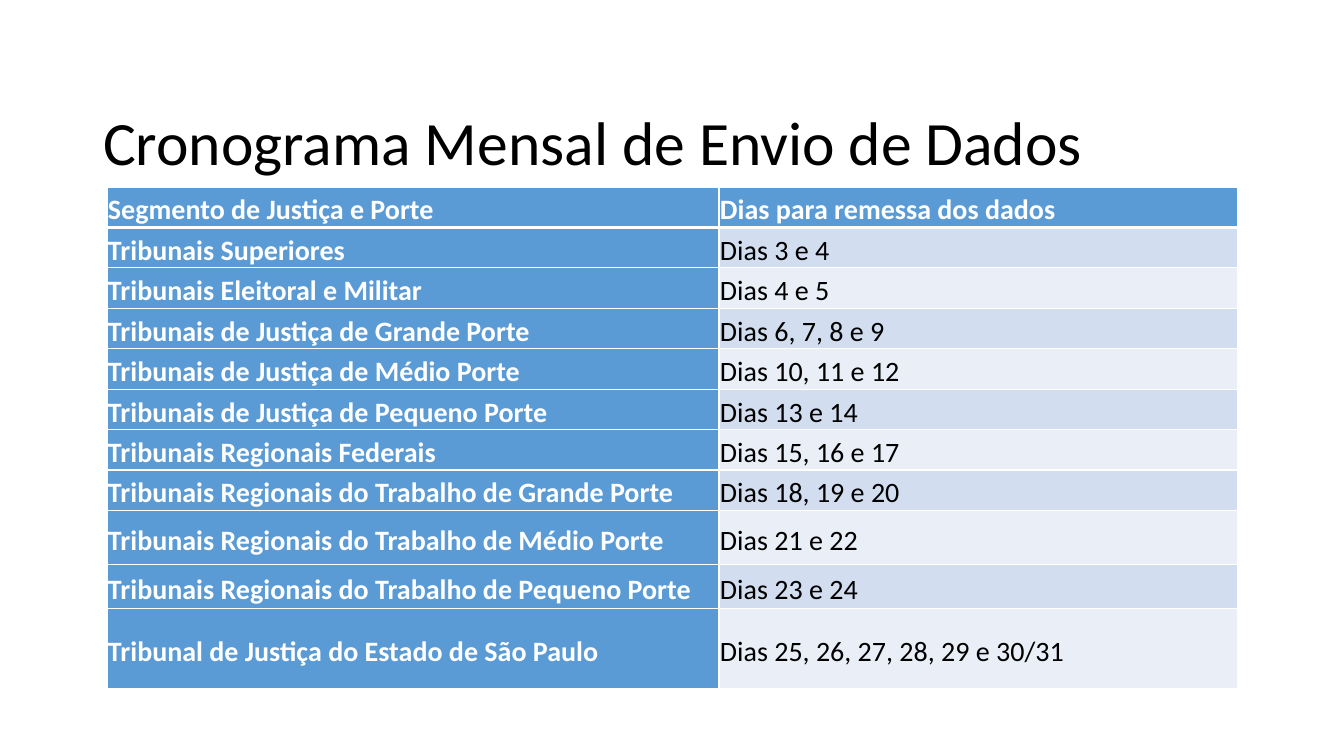
"""Build the slide with the monthly data submission schedule."""
from lxml.etree import SubElement
from pptx import Presentation
from pptx.dml.color import RGBColor
from pptx.enum.text import MSO_ANCHOR, MSO_AUTO_SIZE, PP_ALIGN
from pptx.oxml.ns import qn
from pptx.util import Pt

TITLE = "Cronograma Mensal de Envio de Dados"
SCHEDULE = [
    ("Segmento de Justiça e Porte", "Dias para remessa dos dados"),
    ("Tribunais Superiores", "Dias 3 e 4"),
    ("Tribunais Eleitoral e Militar", "Dias 4 e 5"),
    ("Tribunais de Justiça de Grande Porte", "Dias 6, 7, 8 e 9"),
    ("Tribunais de Justiça de Médio Porte", "Dias 10, 11 e 12"),
    ("Tribunais de Justiça de Pequeno Porte", "Dias 13 e 14"),
    ("Tribunais Regionais Federais", "Dias 15, 16 e 17"),
    ("Tribunais Regionais do Trabalho de Grande Porte", "Dias 18, 19 e 20"),
    ("Tribunais Regionais do Trabalho de Médio Porte", "Dias 21 e 22"),
    ("Tribunais Regionais do Trabalho de Pequeno Porte", "Dias 23 e 24"),
    ("Tribunal de Justiça do Estado de São Paulo", "Dias 25, 26, 27, 28, 29 e 30/31"),
]
COLUMN_WIDTHS = [612, 519]
ROW_HEIGHTS = [40] * 8 + [54, 44, 80]
FONT = "Calibri"
BLACK, WHITE, BLUE = "000000", "FFFFFF", "5B9BD5"
BANDS = ["EAEFF7", "D2DEEF"]


def px(length):
    return round(length * 914400 / 100.8)


def color(code):
    return RGBColor.from_string(code)


def style_text(para, size, code, bold, spacing):
    para.alignment = PP_ALIGN.LEFT
    para.line_spacing = spacing
    for span in para.runs:
        span.font.name = FONT
        span.font.size = Pt(size)
        span.font.bold = bold
        span.font.color.rgb = color(code)


def add_borders(cell, header):
    properties = cell._tc.get_or_add_tcPr()
    for side in ("lnL", "lnR", "lnT", "lnB"):
        width = 3 if header and side == "lnB" else 1
        line = SubElement(properties, qn(f"a:{side}"), w=str(Pt(width)))
        fill = SubElement(line, qn("a:solidFill"))
        SubElement(fill, qn("a:srgbClr"), val=WHITE)


def fill_cell(cell, text, row, column):
    header = row == 0
    strong = header or column == 0
    add_borders(cell, header)
    cell.fill.solid()
    cell.fill.fore_color.rgb = color(BLUE if strong else BANDS[row % 2])
    cell.margin_left = cell.margin_right = cell.margin_top = px(1)
    cell.margin_bottom = 0
    cell.vertical_anchor = MSO_ANCHOR.MIDDLE
    cell.text_frame.text = text
    para = cell.text_frame.paragraphs[0]
    style_text(para, 20, WHITE if strong else BLACK, strong, 1.15)
    para.space_after = Pt(10)


def add_title(page):
    title = page.shapes.title
    title.left, title.top, title.width, title.height = map(px, (93, 104, 1159, 83))
    frame = title.text_frame
    frame.text = TITLE
    frame.word_wrap = True
    frame.auto_size = MSO_AUTO_SIZE.NONE
    frame.vertical_anchor = MSO_ANCHOR.MIDDLE
    style_text(frame.paragraphs[0], 44, BLACK, False, 0.9)


def add_schedule(page):
    size = px(sum(COLUMN_WIDTHS)), px(sum(ROW_HEIGHTS))
    table = page.shapes.add_table(
        len(SCHEDULE), len(COLUMN_WIDTHS), px(107), px(187), *size
    ).table
    table.first_col = True
    for column, width in zip(table.columns, COLUMN_WIDTHS):
        column.width = px(width)
    for row, height in zip(table.rows, ROW_HEIGHTS):
        row.height = px(height)
    for row, entries in enumerate(SCHEDULE):
        for column, text in enumerate(entries):
            fill_cell(table.cell(row, column), text, row, column)


def main():
    deck = Presentation()
    deck.slide_width, deck.slide_height = px(1344), px(756)
    page = deck.slides.add_slide(deck.slide_layouts[5])
    page.background.fill.solid()
    page.background.fill.fore_color.rgb = color(WHITE)
    add_title(page)
    add_schedule(page)
    deck.save("out.pptx")


if __name__ == "__main__":
    main()
